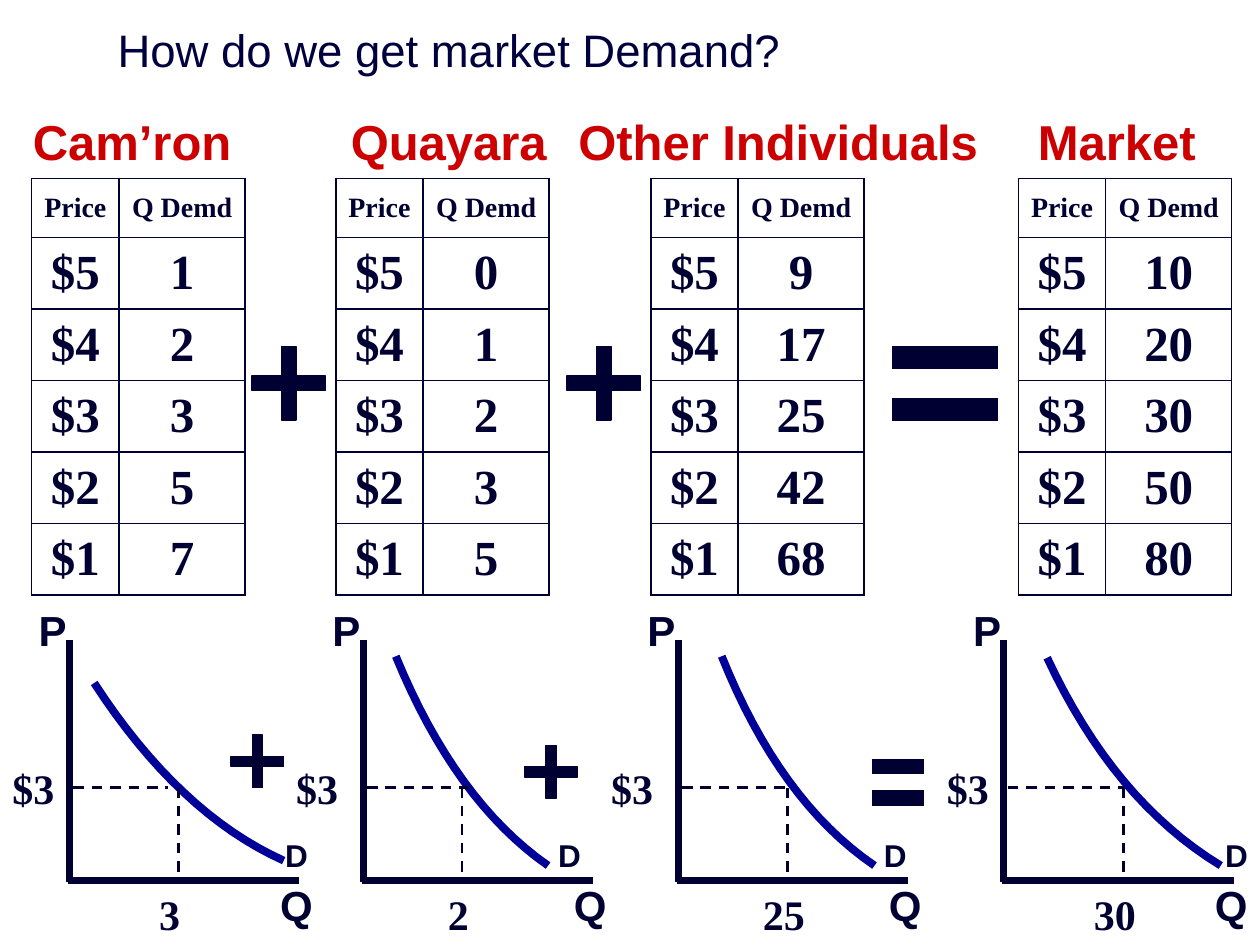
from lxml import etree
from pptx import Presentation
from pptx import util as u
from pptx.dml.color import RGBColor
from pptx.enum import dml, shapes, text
from pptx.oxml.ns import qn

NAVY = RGBColor(0x00, 0x00, 0x32)
TITLE_NAVY = RGBColor(0x00, 0x00, 0x3E)
RED = RGBColor(0xCC, 0x00, 0x00)
BLUE = RGBColor(0x00, 0x00, 0x99)
SANS, SERIF = "Arial", "Times New Roman"

AXIS_TOP, AXIS_BOTTOM = 12.9, 17.75
PRICE_Y = 15.88
PRICES = ["$5", "$4", "$3", "$2", "$1"]

# Each demander: heading (text, left, width), table left, quantities
SCHEDULES = [
    (("Cam’ron ", 0.36, 4.88), 0.64, [1, 2, 3, 5, 7]),
    (("Quayara ", 6.77, 4.55), 6.77, [0, 1, 2, 3, 5]),
    (("Other Individuals ", 11.38, 8.89), 13.12, [9, 17, 25, 42, 68]),
    (("Market ", 20.53, 4.24), 20.53, [10, 20, 30, 50, 80]),
]

# Each graph in cm; curve holds start, control and end points
GRAPHS = [
    dict(axis=1.4, price_left=0, quantity="3", quantity_left=2.96, guide_end=3.39,
         drop=3.6, d_left=5.5, curve=[(1.9, 13.77), (3.61, 16.4), (5.72, 17.35)]),
    dict(axis=7.32, price_left=5.72, quantity="2", quantity_left=8.78, guide_end=9.53,
         drop=9.31, d_left=11.0, curve=[(7.98, 13.23), (9.18, 16.15), (11.05, 17.45)]),
    dict(axis=13.67, price_left=12.07, quantity="25", quantity_left=15.13, guide_end=15.88,
         drop=15.88, d_left=17.57, curve=[(14.55, 13.23), (15.72, 16.15), (17.63, 17.45)]),
    dict(axis=20.24, price_left=18.84, quantity="30", quantity_left=21.8, guide_end=22.65,
         drop=22.65, d_left=24.45, curve=[(21.11, 13.26), (22.45, 16.14), (24.61, 17.45)]),
]


def write_text(frame, content, *, size, font=SANS, color=NAVY, bold=True, align=None):
    paragraph = frame.paragraphs[0]
    paragraph.alignment = align
    run = paragraph.add_run()
    run.text = content
    run.font.name = font
    run.font.size = u.Pt(size)
    run.font.bold = bold
    run.font.color.rgb = color


def add_label(slide, content, left, top, width, height, *, wrap=False,
              anchor=text.MSO_ANCHOR.TOP, **text_format):
    box = slide.shapes.add_textbox(u.Cm(left), u.Cm(top), u.Cm(width), u.Cm(height))
    frame = box.text_frame
    frame.word_wrap = wrap
    frame.vertical_anchor = anchor
    write_text(frame, content, **text_format)


def add_line(slide, start, end, width, dashed=False):
    points = [u.Cm(value) for value in (*start, *end)]
    line = slide.shapes.add_connector(shapes.MSO_CONNECTOR.STRAIGHT, *points)
    line.line.color.rgb = NAVY
    line.line.width = u.Pt(width)
    if dashed:
        line.line.dash_style = dml.MSO_LINE.DASH
    etree.SubElement(line._element.spPr, qn("a:effectLst"))


def add_plus(slide, left, top, size):
    plus = slide.shapes.add_shape(shapes.MSO_SHAPE.CROSS, u.Cm(left), u.Cm(top),
                                  u.Cm(size), u.Cm(size))
    plus.adjustments[0] = 0.4
    plus.shadow.inherit = False
    plus.fill.solid()
    plus.fill.fore_color.rgb = NAVY
    plus.line.color.rgb = NAVY
    plus.line.width = u.Pt(0.75)


def add_equals(slide, left, right, top, gap, width):
    for y in (top, top + gap):
        add_line(slide, (left, y), (right, y), width)


def set_borders(cell):
    properties = cell._tc.get_or_add_tcPr()
    for index, side in enumerate(("lnL", "lnR", "lnT", "lnB")):
        border = etree.Element(qn(f"a:{side}"), w=str(u.Pt(1)))
        fill = etree.SubElement(border, qn("a:solidFill"))
        etree.SubElement(fill, qn("a:srgbClr"), val=str(NAVY))
        properties.insert(index, border)


def add_schedule(slide, left, quantities):
    rows = [("Price", "Q Demd"), *zip(PRICES, map(str, quantities))]
    table = slide.shapes.add_table(len(rows), 2, u.Cm(left), u.Cm(3.6),
                                   u.Cm(4.3), u.Cm(8.4)).table
    table.first_row = table.horz_banding = False
    for column, width in zip(table.columns, (1.76, 2.54)):
        column.width = u.Cm(width)
    for row_index, values in enumerate(rows):
        table.rows[row_index].height = u.Cm(1.44 if row_index else 1.19)
        for column_index, value in enumerate(values):
            cell = table.cell(row_index, column_index)
            cell.fill.background()
            cell.margin_left = cell.margin_right = u.Cm(0.1)
            cell.vertical_anchor = text.MSO_ANCHOR.MIDDLE
            write_text(cell.text_frame, value, size=28 if row_index else 16,
                       font=SERIF, align=text.PP_ALIGN.CENTER)
            set_borders(cell)


def add_curve(slide, start, control, end, steps=16):
    """Draw a demand curve as a quadratic Bezier outline."""
    points = []
    for step in range(steps + 1):
        t = step / steps
        points.append(tuple(
            u.Cm((1 - t) ** 2 * a + 2 * t * (1 - t) * b + t ** 2 * c)
            for a, b, c in zip(start, control, end)))
    builder = slide.shapes.build_freeform(*points[0])
    builder.add_line_segments(points[1:], close=False)
    curve = builder.convert_to_shape()
    curve.shadow.inherit = False
    curve.fill.background()
    curve.line.color.rgb = BLUE
    curve.line.width = u.Pt(4.5)


def add_graph(slide, axis, price_left, quantity, quantity_left, guide_end, drop,
              d_left, curve):
    # Axes
    add_line(slide, (axis, AXIS_TOP), (axis, AXIS_BOTTOM + 0.03), 4)
    add_line(slide, (axis - 0.03, AXIS_BOTTOM), (axis + 4.63, AXIS_BOTTOM), 4)
    add_label(slide, "P", axis - 0.87, 12.07, 1.07, 1.27, size=24)
    add_label(slide, "Q", axis + 4, 17.6, 1.17, 1.27, size=24)
    # Curve and dashed guides
    add_curve(slide, *curve)
    add_line(slide, (axis + 0.08, PRICE_Y), (guide_end, PRICE_Y), 1.5, dashed=True)
    add_line(slide, (drop, 17.57), (drop, PRICE_Y), 1.5, dashed=True)
    # Values
    add_label(slide, "$3", price_left, 15.24, 1.35, 1.27, size=24, font=SERIF)
    add_label(slide, quantity, quantity_left, 17.78, 0.51 + 0.42 * len(quantity), 1.27,
              size=24, font=SERIF)
    add_label(slide, "D", d_left, 16.72, 0.97, 1.02, size=18)


def main():
    presentation = Presentation()
    presentation.slide_width, presentation.slide_height = u.Cm(25.4), u.Cm(19.05)
    slide = presentation.slides.add_slide(presentation.slide_layouts[6])

    add_label(slide, "How do we get market Demand?", 2.12, -0.2, 25.4, 2.4, wrap=True,
              anchor=text.MSO_ANCHOR.MIDDLE, size=26, color=TITLE_NAVY, bold=False)

    # Demand schedules
    for (name, left, width), table_left, quantities in SCHEDULES:
        add_label(slide, name, left, 2.12, width, 1.45, wrap=True, size=28, color=RED,
                  align=text.PP_ALIGN.CENTER)
        add_schedule(slide, table_left, quantities)

    # Demand graphs
    for graph in GRAPHS:
        add_graph(slide, **graph)

    # Signs between the schedules and between the graphs
    for left, top, size in ((5.08, 6.99, 1.48), (11.43, 6.99, 1.48),
                            (4.66, 14.82, 1.06), (10.58, 15.03, 1.06)):
        add_plus(slide, left, top, size)
    add_equals(slide, 17.99, 20.11, 7.2, 1.06, 13)
    add_equals(slide, 17.57, 18.63, 15.45, 0.64, 9)

    presentation.save("out.pptx")


if __name__ == "__main__":
    main()
